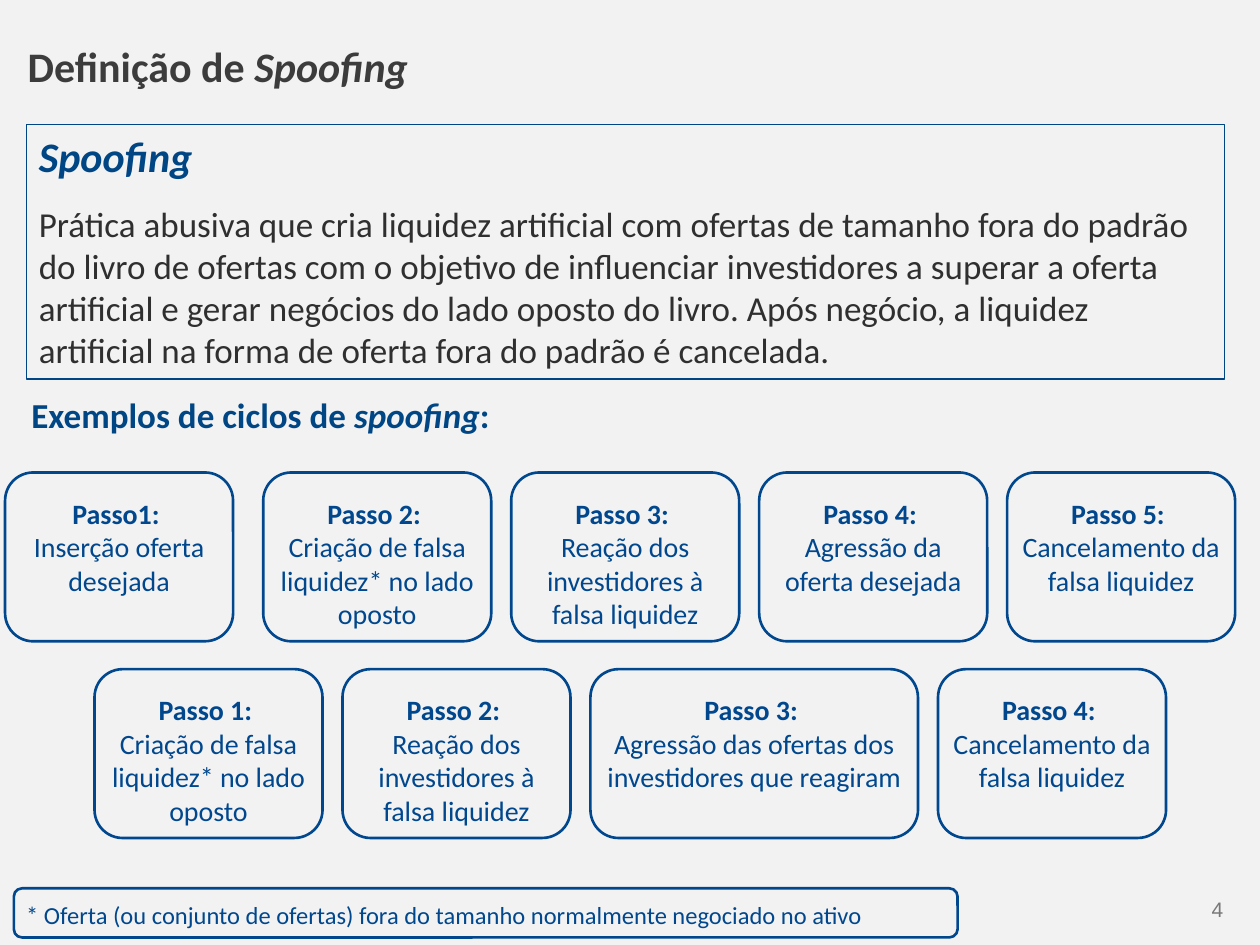
from pptx import Presentation
from pptx.dml.color import RGBColor
from pptx.enum.shapes import MSO_SHAPE
from pptx.enum.text import MSO_ANCHOR, PP_ALIGN
from pptx.util import Pt

BACKGROUND = RGBColor(0xF2, 0xF2, 0xF2)
TITLE_GREY = RGBColor(0x3C, 0x3C, 0x3C)
BODY_GREY = RGBColor(0x2F, 0x2F, 0x2F)
NUMBER_GREY = RGBColor(0x79, 0x79, 0x79)
NAVY = RGBColor(0x00, 0x46, 0x85)
STEP_BLUE = RGBColor(0x00, 0x47, 0x8D)

STEP_WIDTH, WIDE_STEP, STEP_HEIGHT, STEP_GAP = 130.3, 187.2, 96.5, 11.4

CREATE = "Criação de falsa liquidez* no lado oposto"
REACT = "Reação dos investidores à falsa liquidez"
CANCEL = "Cancelamento da falsa liquidez"

# Each step: heading, action, width
FIRST_STEP = [("Passo1: ", "Inserção oferta desejada", STEP_WIDTH)]
FIRST_CYCLE = [
    ("Passo 2: ", CREATE, STEP_WIDTH),
    ("Passo 3: ", REACT, STEP_WIDTH),
    ("Passo 4: ", "Agressão da oferta desejada", STEP_WIDTH),
    ("Passo 5: ", CANCEL, STEP_WIDTH),
]
SECOND_CYCLE = [
    ("Passo 1: ", CREATE, STEP_WIDTH),
    ("Passo 2: ", REACT, STEP_WIDTH),
    ("Passo 3: ", "Agressão das ofertas dos investidores que reagiram", WIDE_STEP),
    ("Passo 4: ", CANCEL, STEP_WIDTH),
]


def style(paragraph, size, color, bold=False, align=PP_ALIGN.LEFT, name="Calibri"):
    paragraph.alignment = align
    font = paragraph.font
    font.name, font.size, font.bold = name, Pt(size), bold
    font.color.rgb = color


def add_runs(paragraph, *pieces):
    """Add (text, italic) pieces to a paragraph."""
    for text, italic in pieces:
        run = paragraph.add_run()
        run.text = text
        run.font.italic = italic


def add_frame(shapes, kind, left, top, width, height, color, weight):
    frame = shapes.add_shape(kind, Pt(left), Pt(top), Pt(width), Pt(height))
    frame.shadow.inherit = False
    frame.fill.background()
    frame.line.color.rgb = color
    frame.line.width = Pt(weight)
    return frame


def add_text(shapes, left, top, width, height):
    box = shapes.add_textbox(Pt(left), Pt(top), Pt(width), Pt(height))
    box.text_frame.word_wrap = True
    return box.text_frame


def add_rounded_note(slide, left, top, width, height, text_offset):
    """Group a rounded frame with its text box and return the text frame."""
    shapes = slide.shapes.add_group_shape().shapes
    add_frame(shapes, MSO_SHAPE.ROUNDED_RECTANGLE, left, top, width, height,
              STEP_BLUE, 1.5)
    return add_text(shapes, left, top + text_offset, width, height - text_offset)


def add_steps(slide, left, top, steps):
    for heading, action, width in steps:
        text = add_rounded_note(slide, left, top, width, STEP_HEIGHT, 10)
        text.text = f"{heading}\n{action}"
        for paragraph, bold in zip(text.paragraphs, (True, False)):
            style(paragraph, 16, STEP_BLUE, bold, PP_ALIGN.CENTER)
        left += width + STEP_GAP


def add_title(slide):
    title = slide.shapes.title
    title.left, title.top, title.width, title.height = Pt(8.6), Pt(15.1), Pt(544.3), Pt(45.4)
    title.text_frame.vertical_anchor = MSO_ANCHOR.MIDDLE
    paragraph = title.text_frame.paragraphs[0]
    add_runs(paragraph, ("Definição de ", False), ("Spoofing", True))
    style(paragraph, 24, TITLE_GREY, True)


def add_definition(slide):
    frame = add_frame(slide.shapes, MSO_SHAPE.RECTANGLE, 15.1, 71.3, 684.7, 145.4,
                      NAVY, 0.75)
    text = frame.text_frame
    text.word_wrap = True
    text.vertical_anchor = MSO_ANCHOR.TOP
    term = text.paragraphs[0]
    add_runs(term, ("Spoofing", True))
    style(term, 24, NAVY, True)
    meaning = text.add_paragraph()
    meaning.text = (
        "Prática abusiva que cria liquidez artificial com ofertas de tamanho fora do "
        "padrão do livro de ofertas com o objetivo de influenciar investidores a superar "
        "a oferta artificial e gerar negócios do lado oposto do livro. Após negócio, a "
        "liquidez artificial na forma de oferta fora do padrão é cancelada."
    )
    meaning.space_before = Pt(12)
    style(meaning, 20, BODY_GREY)


def add_examples_heading(slide):
    text = add_text(slide.shapes, 10.8, 221, 321.1, 31.7)
    text.vertical_anchor = MSO_ANCHOR.MIDDLE
    heading = text.paragraphs[0]
    add_runs(heading, ("Exemplos de ciclos de ", False), ("spoofing", True), (":", False))
    style(heading, 20, NAVY, True)


def add_footer(slide):
    note = add_rounded_note(slide, 7.9, 507.6, 539.3, 28.1, 3)
    note.text = ("* Oferta (ou conjunto de ofertas) fora do tamanho normalmente "
                 "negociado no ativo")
    style(note.paragraphs[0], 14, STEP_BLUE)

    number = add_text(slide.shapes, 679.7, 512.6, 19.4, 14.4)
    number.margin_left = number.margin_right = number.margin_top = number.margin_bottom = 0
    number.text = "4"
    style(number.paragraphs[0], 12, NUMBER_GREY, align=PP_ALIGN.RIGHT, name="Arial")


def main():
    deck = Presentation()
    deck.slide_width, deck.slide_height = Pt(720), Pt(540)
    slide = deck.slides.add_slide(deck.slide_layouts[5])
    slide.background.fill.solid()
    slide.background.fill.fore_color.rgb = BACKGROUND

    # Title and definition
    add_title(slide)
    add_examples_heading(slide)
    add_definition(slide)

    # Two example cycles
    add_steps(slide, 2.9, 270, FIRST_STEP)
    add_steps(slide, 150.4, 270, FIRST_CYCLE)
    add_steps(slide, 54, 382.4, SECOND_CYCLE)

    # Footnote and slide number
    add_footer(slide)
    deck.save("out.pptx")


if __name__ == "__main__":
    main()
